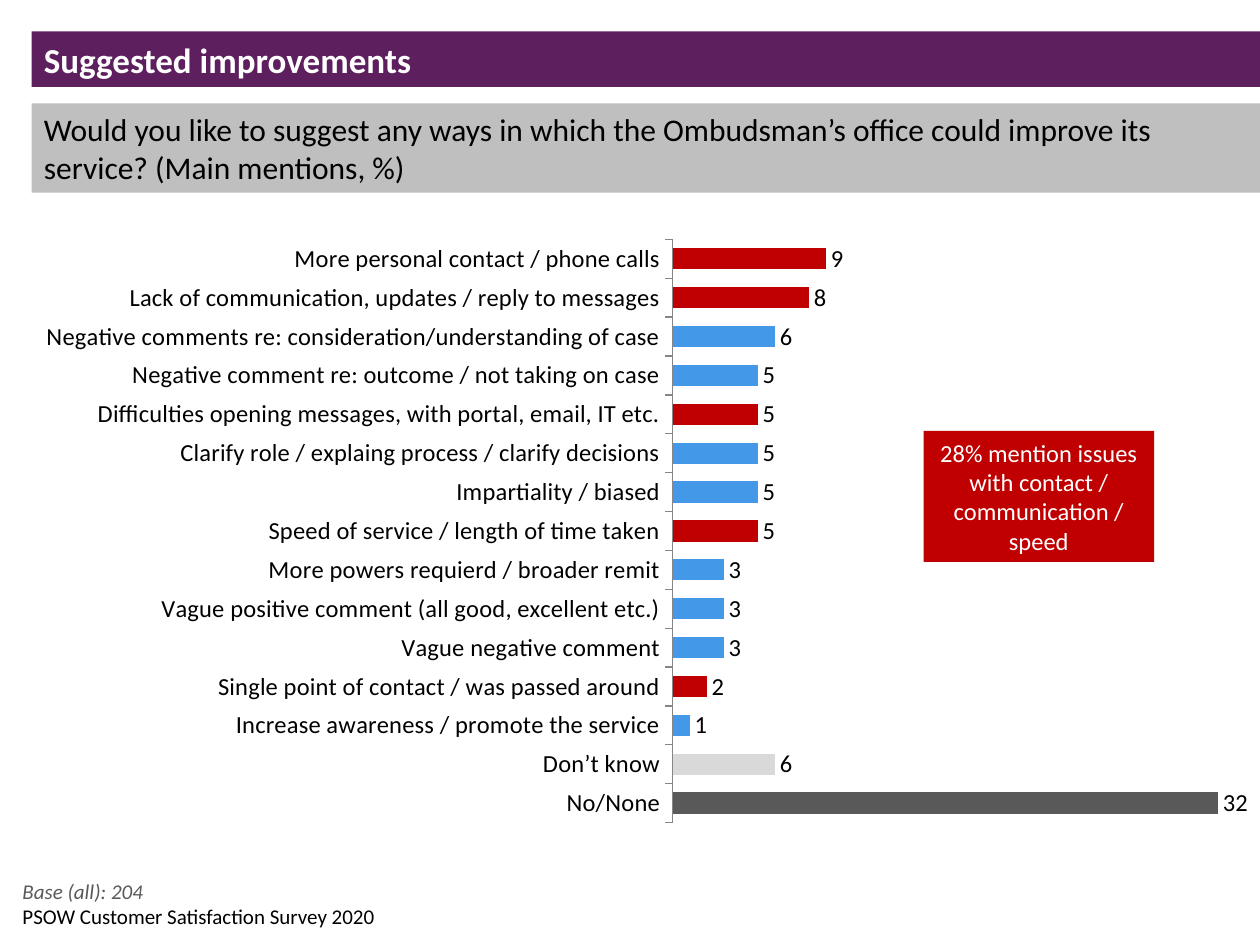
from typing import NamedTuple

from lxml import etree
from pptx import Presentation
from pptx.chart.data import CategoryChartData
from pptx.dml.color import RGBColor
from pptx.enum.chart import XL_CHART_TYPE, XL_LABEL_POSITION, XL_TICK_LABEL_POSITION, XL_TICK_MARK
from pptx.enum.shapes import MSO_SHAPE
from pptx.enum.text import MSO_ANCHOR, PP_ALIGN
from pptx.oxml.ns import qn
from pptx.util import Inches, Pt

BAR_CLUSTERED = XL_CHART_TYPE.BAR_CLUSTERED
OUTSIDE_END = XL_LABEL_POSITION.OUTSIDE_END
LABELS_LOW = XL_TICK_LABEL_POSITION.LOW
TICK_OUTSIDE, TICK_NONE = XL_TICK_MARK.OUTSIDE, XL_TICK_MARK.NONE
RECTANGLE = MSO_SHAPE.RECTANGLE
TOP, MIDDLE, BOTTOM = MSO_ANCHOR.TOP, MSO_ANCHOR.MIDDLE, MSO_ANCHOR.BOTTOM
LEFT, CENTER = PP_ALIGN.LEFT, PP_ALIGN.CENTER

FONT = "Calibri"
COLORS = {
    "title": "5D1F5E",
    "question": "BFBFBF",
    "contact": "C00000",
    "other": "4399E7",
    "unsure": "D9D9D9",
    "none": "595959",
    "base": "595959",
    "axis": "868686",
    "black": "000000",
    "white": "FFFFFF",
}


class Box(NamedTuple):
    left: float
    top: float
    width: float
    height: float

    def lengths(self):
        return [Inches(value) for value in self]


class TextStyle(NamedTuple):
    size: int
    color: str
    bold: bool = False
    italic: bool = False
    align: PP_ALIGN = LEFT
    anchor: MSO_ANCHOR = TOP


class Mention(NamedTuple):
    label: str
    percent: int
    group: str


MENTIONS = [
    Mention("More personal contact / phone calls", 9, "contact"),
    Mention("Lack of communication, updates / reply to messages", 8, "contact"),
    Mention("Negative comments re: consideration/understanding of case", 6, "other"),
    Mention("Negative comment re: outcome / not taking on case", 5, "other"),
    Mention("Difficulties opening messages, with portal, email, IT etc.", 5, "contact"),
    Mention("Clarify role / explaing process / clarify decisions", 5, "other"),
    Mention("Impartiality / biased", 5, "other"),
    Mention("Speed of service / length of time taken", 5, "contact"),
    Mention("More powers requierd / broader remit", 3, "other"),
    Mention("Vague positive comment (all good, excellent etc.)", 3, "other"),
    Mention("Vague negative comment", 3, "other"),
    Mention("Single point of contact / was passed around", 2, "contact"),
    Mention("Increase awareness / promote the service", 1, "other"),
    Mention("Don’t know", 6, "unsure"),
    Mention("No/None", 32, "none"),
]
PLOT_AREA = {"x": 0.603, "y": 0.03, "w": 0.389, "h": 0.926}


def rgb(name: str) -> RGBColor:
    return RGBColor.from_string(COLORS[name])


def write_text(shape, text: str, style: TextStyle) -> None:
    frame = shape.text_frame
    frame.word_wrap = True
    frame.vertical_anchor = style.anchor
    frame.text = text
    paragraph = frame.paragraphs[0]
    paragraph.alignment = style.align
    font = paragraph.runs[0].font
    font.name, font.size = FONT, Pt(style.size)
    font.bold, font.italic = style.bold, style.italic
    font.color.rgb = rgb(style.color)


def add_text(slide, box: Box, text: str, style: TextStyle) -> None:
    write_text(slide.shapes.add_textbox(*box.lengths()), text, style)


def add_panel(slide, box: Box, fill: str, text: str, style: TextStyle) -> None:
    panel = slide.shapes.add_shape(RECTANGLE, *box.lengths())
    panel.shadow.inherit = False
    panel.fill.solid()
    panel.fill.fore_color.rgb = rgb(fill)
    panel.line.fill.background()
    write_text(panel, text, style)


def fix_plot_area(chart, fractions: dict[str, float]) -> None:
    """Pin the inner plot area to fractions of the chart frame."""
    plot_area = chart.plots[0]._element.getparent()
    for old_layout in plot_area.findall(qn("c:layout")):
        plot_area.remove(old_layout)
    layout = etree.Element(qn("c:layout"))
    plot_area.insert(0, layout)
    manual = etree.SubElement(layout, qn("c:manualLayout"))
    settings = {"layoutTarget": "inner", "xMode": "edge", "yMode": "edge", **fractions}
    for tag, value in settings.items():
        etree.SubElement(manual, qn(f"c:{tag}")).set("val", str(value))


def add_mentions_chart(slide, box: Box, mentions: list[Mention]) -> None:
    data = CategoryChartData()
    data.categories = [mention.label for mention in mentions]
    data.add_series("Series 1", [mention.percent for mention in mentions])
    chart = slide.shapes.add_chart(BAR_CLUSTERED, *box.lengths(), data).chart
    chart.has_legend = chart.has_title = False
    chart.font.name, chart.font.size = FONT, Pt(14)
    chart.font.color.rgb = rgb("black")

    categories = chart.category_axis
    categories.reverse_order = True
    categories.major_tick_mark, categories.minor_tick_mark = TICK_OUTSIDE, TICK_NONE
    categories.tick_label_position = LABELS_LOW
    categories.format.line.color.rgb = rgb("axis")
    categories.format.line.width = Pt(0.75)
    values = chart.value_axis
    values.minimum_scale, values.maximum_scale = 0, 35
    values.has_major_gridlines = False
    values.visible = False

    plot = chart.plots[0]
    plot.gap_width = 82
    plot.vary_by_categories = False
    series = plot.series[0]
    series.invert_if_negative = False
    series.format.fill.solid()
    series.format.fill.fore_color.rgb = rgb("contact")
    for index, mention in enumerate(mentions):
        if mention.group != "contact":
            fill = series.points[index].format.fill
            fill.solid()
            fill.fore_color.rgb = rgb(mention.group)
    labels = series.data_labels
    labels.show_value = True
    labels.position = OUTSIDE_END
    fix_plot_area(chart, PLOT_AREA)


def main() -> None:
    presentation = Presentation()
    presentation.slide_width, presentation.slide_height = Inches(10), Inches(7.5)
    slide = presentation.slides.add_slide(presentation.slide_layouts[6])

    add_text(slide, Box(0.08, 6.92, 5.25, 0.5), "PSOW Customer Satisfaction Survey 2020",
             TextStyle(12, "black", anchor=BOTTOM))
    add_panel(slide, Box(0.25, 0.25, 9.75, 0.44), "title", "Suggested improvements",
              TextStyle(20, "white", bold=True, anchor=MIDDLE))
    add_panel(slide, Box(0.25, 0.82, 9.75, 0.71), "question",
              "Would you like to suggest any ways in which the Ombudsman’s office "
              "could improve its service? (Main mentions, %)",
              TextStyle(18, "black", anchor=MIDDLE))
    add_text(slide, Box(0.08, 6.92, 7.25, 0.3), "Base (all): 204",
             TextStyle(12, "base", italic=True))
    add_mentions_chart(slide, Box(-2, 1.75, 12.17, 5), MENTIONS)
    add_panel(slide, Box(7.33, 3.42, 1.83, 1.04), "contact",
              "28% mention issues with contact / communication / speed",
              TextStyle(14, "white", align=CENTER, anchor=MIDDLE))
    presentation.save("out.pptx")


if __name__ == "__main__":
    main()
